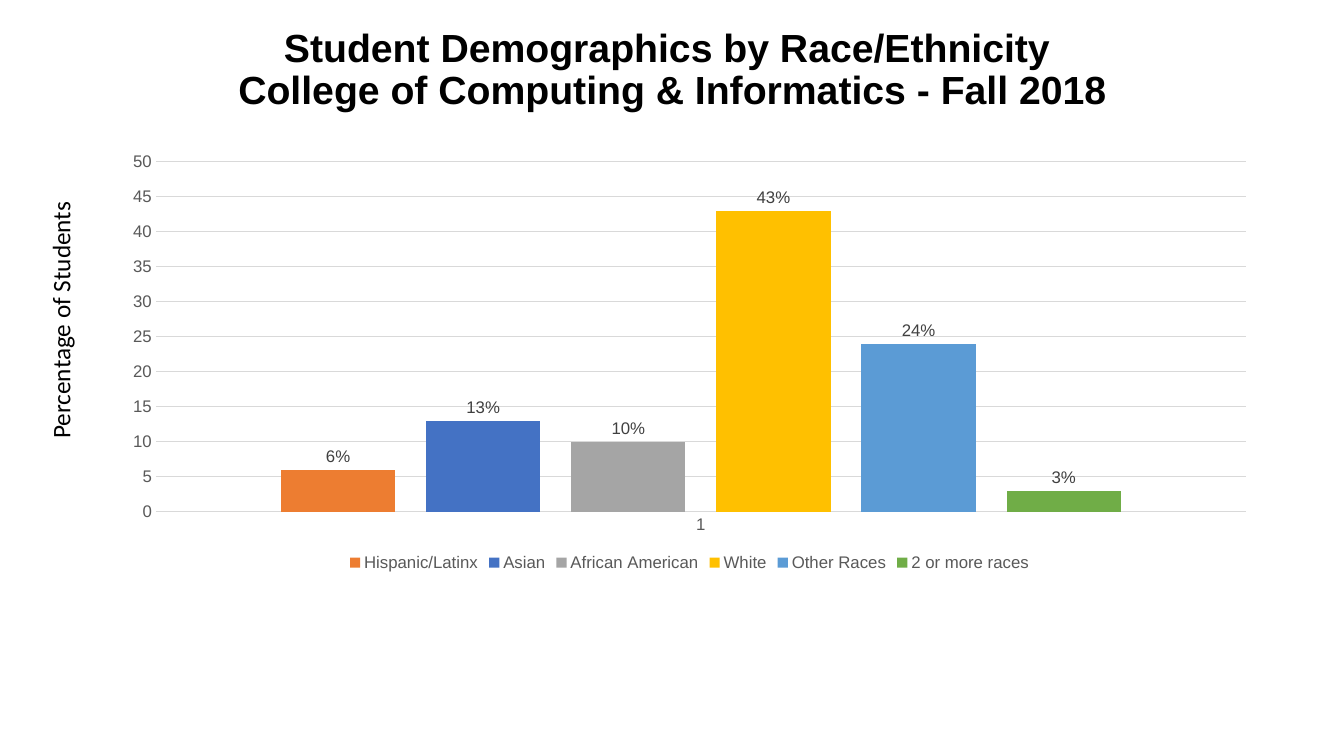
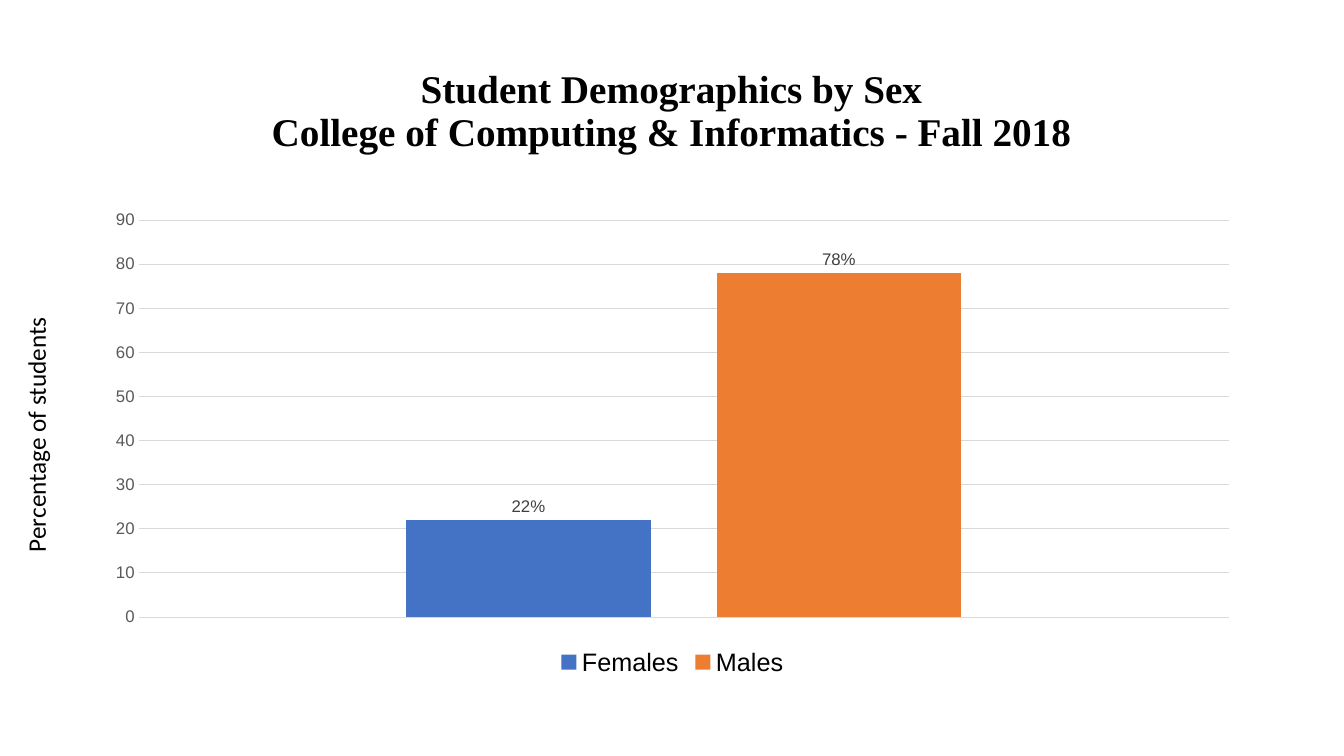
from pptx import Presentation, util as u
from pptx.chart.data import CategoryChartData
from pptx.dml.color import RGBColor
from pptx.enum import chart as ch, text

WIDTH, HEIGHT = u.Inches(13.33), u.Inches(7.5)
BLACK, GRAY, DARK, RULE = "000000", "595959", "404040", "D9D9D9"
ORANGE, BLUE, SILVER = "ED7D31", "4472C4", "A5A5A5"
GOLD, SKY, GREEN = "FFC000", "5B9BD5", "70AD47"
COLLEGE = "College of Computing & Informatics - Fall 2018"


def rgb(color):
    """Turn a hex string into a colour."""
    return RGBColor.from_string(color)


def share(left, top, width, height):
    """Turn percentages of the slide into a box."""
    return [round(part * side / 100) for part, side in
            zip((left, top, width, height), (WIDTH, HEIGHT) * 2)]


def style(font, size, color, face="Arial", bold=False):
    """Set size, colour, face and weight of a font."""
    font.size, font.name, font.bold = u.Pt(size), face, bold
    font.color.rgb = rgb(color)


def rule(line):
    """Draw a thin light line."""
    line.color.rgb = rgb(RULE)
    line.width = u.Pt(0.75)


def add_titled_slide(prs, subject, face, box):
    """Add a slide headed by its subject and the college."""
    slide = prs.slides.add_slide(prs.slide_layouts[5])
    heading = slide.shapes.title
    heading.left, heading.top, heading.width, heading.height = share(*box)
    frame = heading.text_frame
    frame.text = f"{subject}\v{COLLEGE}"
    frame.vertical_anchor = text.MSO_ANCHOR.MIDDLE
    frame.auto_size = text.MSO_AUTO_SIZE.NONE
    line = frame.paragraphs[0]
    line.alignment, line.line_spacing = text.PP_ALIGN.CENTER, 0.9
    style(line.font, 28, BLACK, face, True)
    return slide


def add_axis_caption(slide, caption, box):
    """Add a caption that reads upwards beside the chart."""
    label = slide.shapes.add_textbox(*share(*box))
    label.rotation = 270
    frame = label.text_frame
    frame.word_wrap = True
    frame.auto_size = text.MSO_AUTO_SIZE.SHAPE_TO_FIT_TEXT
    frame.text = caption
    style(frame.paragraphs[0].font, 18, BLACK, "Calibri")


def add_columns(slide, groups, box, top, step, legend=(12, GRAY), show_category=True):
    """Add a column chart with one series per (name, percent, colour)."""
    data = CategoryChartData()
    data.categories = ["1"]
    for name, percent, _ in groups:
        data.add_series(name, [percent])
    chart = slide.shapes.add_chart(
        ch.XL_CHART_TYPE.COLUMN_CLUSTERED, *share(*box), data).chart
    style(chart.font, 10, BLACK)
    chart.has_title = False
    chart.has_legend = True
    chart.legend.position = ch.XL_LEGEND_POSITION.BOTTOM
    chart.legend.include_in_layout = False
    style(chart.legend.font, *legend)

    plot = chart.plots[0]
    plot.gap_width, plot.overlap, plot.vary_by_categories = 219, -27, False
    for series, (_, _, color) in zip(plot.series, groups):
        series.format.fill.solid()
        series.format.fill.fore_color.rgb = rgb(color)
        labels = series.data_labels
        labels.show_value = True
        labels.number_format, labels.number_format_is_linked = '0"%"', False
        labels.position = ch.XL_LABEL_POSITION.OUTSIDE_END
        style(labels.font, 12, DARK)

    values, category = chart.value_axis, chart.category_axis
    values.minimum_scale, values.maximum_scale, values.major_unit = 0, top, step
    values.format.line.fill.background()
    rule(values.major_gridlines.format.line)
    rule(category.format.line)
    for axis in (values, category):
        axis.major_tick_mark = ch.XL_TICK_MARK.NONE
        style(axis.tick_labels.font, 12, GRAY)
    category.visible = show_category


def main():
    """Build both slides and save them."""
    prs = Presentation()
    prs.slide_width, prs.slide_height = WIDTH, HEIGHT

    slide = add_titled_slide(prs, "Student Demographics by Race/Ethnicity ",
                             "Arial", (6.9, -0.27, 86.25, 19.33))
    ethnicities = [("Hispanic/Latinx", 6, ORANGE), ("Asian", 13, BLUE),
                   ("African American", 10, SILVER), ("White", 43, GOLD),
                   ("Other Races", 24, SKY), ("2 or more races", 3, GREEN)]
    add_columns(slide, ethnicities, (8.18, 19.07, 86.25, 57.07), 50, 5)
    add_axis_caption(slide, "Percentage of Students", (-6, 38, 21, 5.33))

    slide = add_titled_slide(prs, "Student Demographics by Sex",
                             "Times New Roman", (2.7, 5.33, 94.5, 19.07))
    sexes = [("Females", 22, BLUE), ("Males", 78, ORANGE)]
    add_columns(slide, sexes, (6.9, 26.67, 86.25, 63.47), 90, 10,
                legend=(18, BLACK), show_category=False)
    add_axis_caption(slide, "Percentage of students", (-6.3, 52.53, 19.73, 8.53))

    prs.save("out.pptx")


if __name__ == "__main__":
    main()
